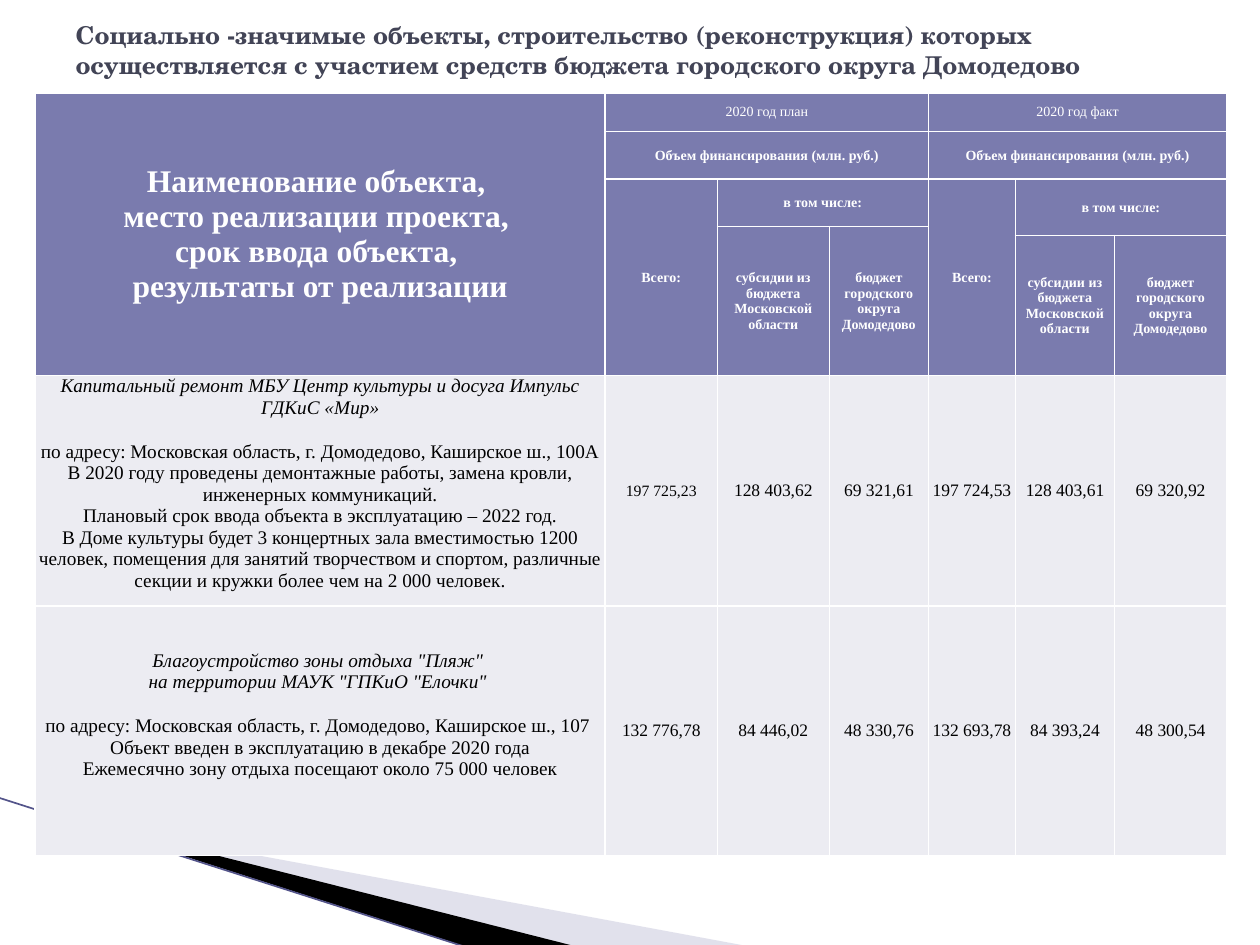
"""Build the slide on socially significant construction projects of the city district."""
from lxml import etree
from pptx import Presentation
from pptx import util as u
from pptx.dml import color
from pptx.enum import shapes, text
from pptx.oxml import ns

SERIF = "Times New Roman"
HEAD, BODY, WHITE, BLACK = "7A7BAE", "ECECF2", "FFFFFF", "000000"
COLS = [11.49, 2.26, 2.26, 2, 1.75, 2, 2.26]
ROWS = [0.78, 0.96, 0.96, 0.18, 2.82, 4.65, 5.03]
VOLUME = "Объем финансирования (млн. руб.)"
GRANT = "субсидии из бюджета Московской области"
LOCAL = "бюджет городского округа Домодедово"

# row, column, rows spanned, columns spanned, words, bold
HEADS = [
    (0, 1, 1, 3, "2020 год план", False),
    (0, 4, 1, 3, "2020 год факт", False),
    (1, 1, 1, 3, VOLUME, True),
    (1, 4, 1, 3, VOLUME, True),
    (2, 1, 3, 1, "Всего:", True),
    (2, 2, 1, 2, "в том числе:", True),
    (2, 4, 3, 1, "Всего:", True),
    (2, 5, 2, 2, "в том числе:", True),
    (3, 2, 2, 1, GRANT, True),
    (3, 3, 2, 1, LOCAL, True),
    (4, 5, 1, 1, GRANT, True),
    (4, 6, 1, 1, LOCAL, True),
]
NAME = ["Наименование объекта, ", "место реализации проекта, ",
        "срок ввода объекта, ", "результаты от реализации"]
# italic lines, plain lines, bottom margin, values
SITES = [
    (["Капитальный ремонт МБУ Центр культуры и досуга Импульс ГДКиС «Мир»"],
     ["по адресу: Московская область, г. Домодедово, Каширское ш., 100А",
      "В 2020 году проведены демонтажные работы, замена кровли, инженерных коммуникаций.",
      "Плановый срок ввода объекта в эксплуатацию – 2022 год.",
      "В Доме культуры будет 3 концертных зала вместимостью 1200 человек, помещения "
      "для занятий творчеством и спортом, различные секции и кружки более чем на "
      "2 000 человек."],
     0.3,
     ["197 725,23", "128 403,62", "69 321,61", "197 724,53", "128 403,61", "69 320,92"]),
    (['Благоустройство зоны отдыха "Пляж" ', 'на территории МАУК "ГПКиО "Елочки" '],
     ["по адресу: Московская область, г. Домодедово, Каширское ш., 107 ",
      "Объект введен в эксплуатацию в декабре 2020 года",
      "Ежемесячно зону отдыха посещают около 75 000 человек"],
     0.65,
     ["132 776,78", "84 446,02", "48 330,76", "132 693,78", "84 393,24", "48 300,54"]),
]


def rgb(code):
    """Turn a hex string into a colour."""
    return color.RGBColor.from_string(code)


class Page:
    """Hold the style and the current slide."""

    def __init__(self, deck):
        """Add a title-only slide."""
        self.slide = deck.slides.add_slide(deck.slide_layouts[5])
        self.items = self.slide.shapes

    def run(self, para, words, size, tint, bold=False, slant=False, font=SERIF):
        """Add one run of text."""
        run = para.add_run()
        run.text = words
        run.font.name, run.font.size = font, u.Pt(size)
        run.font.bold, run.font.italic = bold, slant
        run.font.color.rgb = rgb(tint)

    def title(self, words, box):
        """Place and fill the title."""
        head = self.items.title
        head.left, head.top, head.width, head.height = map(u.Cm, box)
        frame = head.text_frame
        frame.word_wrap, frame.auto_size = True, text.MSO_AUTO_SIZE.NONE
        frame.vertical_anchor = text.MSO_ANCHOR.MIDDLE
        para = frame.paragraphs[0]
        para.alignment = text.PP_ALIGN.LEFT
        self.run(para, words, 14, "424456", bold=True, font="TeX Gyre Schola")

    def wedge(self, points, tint, alpha=None):
        """Draw a filled outline."""
        dots = [(u.Cm(x), u.Cm(y)) for x, y in points]
        pen = self.items.build_freeform(*dots[0])
        pen.add_line_segments(dots[1:])
        form = pen.convert_to_shape()
        form.shadow.inherit = False
        form.fill.solid()
        form.fill.fore_color.rgb = rgb(tint)
        form.line.fill.background()
        if alpha:
            tone = form.fill._xPr.find(".//" + ns.qn("a:srgbClr"))
            etree.SubElement(tone, ns.qn("a:alpha"), val=str(alpha * 1000))

    def line(self, ends, tint, width):
        """Draw a straight line."""
        link = self.items.add_connector(shapes.MSO_CONNECTOR.STRAIGHT, *map(u.Cm, ends))
        link.line.color.rgb, link.line.width = rgb(tint), u.Pt(width)
        etree.SubElement(link._element.spPr, ns.qn("a:effectLst"))

    def table(self, left, top, cols, rows):
        """Add an empty table with white rules."""
        grid = self.items.add_table(len(rows), len(cols), u.Cm(left), u.Cm(top),
                                    u.Cm(sum(cols)), u.Cm(sum(rows))).table
        grid.first_row = grid.horz_banding = False
        for col, width in zip(grid.columns, cols):
            col.width = u.Cm(width)
        for row, height in zip(grid.rows, rows):
            row.height = u.Cm(height)
        for cell in grid.iter_cells():
            self.rule(cell)
        return grid

    def rule(self, cell):
        """Give a cell four white borders."""
        prop = cell._tc.get_or_add_tcPr()
        for side in ("lnL", "lnR", "lnT", "lnB"):
            edge = etree.SubElement(prop, ns.qn("a:" + side), w=str(u.Pt(1)))
            fill = etree.SubElement(edge, ns.qn("a:solidFill"))
            etree.SubElement(fill, ns.qn("a:srgbClr"), val=WHITE)

    def cell(self, cell, lines, fill, size, tint, bold=False, lead=(), foot=0):
        """Fill a cell with italic lead lines, then plain lines after a gap."""
        cell.fill.solid()
        cell.fill.fore_color.rgb = rgb(fill)
        cell.margin_left = cell.margin_right = cell.margin_top = 0
        cell.margin_bottom = u.Cm(foot)
        cell.vertical_anchor = text.MSO_ANCHOR.MIDDLE
        frame = cell.text_frame
        for i, words in enumerate([*lead, *lines]):
            para = frame.add_paragraph() if i else frame.paragraphs[0]
            para.alignment = text.PP_ALIGN.CENTER
            if lead and i == len(lead):
                para.space_before = u.Pt(13)
            self.run(para, words, size, tint, bold, i < len(lead))


def main():
    """Build and save the slide."""
    deck = Presentation()
    deck.slide_width, deck.slide_height = u.Cm(25.4), u.Cm(19.05)
    page = Page(deck)
    page.wedge([(1.4, 16.54), (15.11, 19.08), (11.58, 19.08), (1.4, 16.51)], "B6B6D1", 40)
    page.wedge([(1.35, 16.48), (11.61, 19.08), (9.45, 19.1), (1.37, 16.51)], BLACK)
    page.line((-0.03, 16.08, 9.42, 19.1), "53548A", 0.95)
    page.title("Cоциально -значимые объекты, строительство (реконструкция) которых "
               "осуществляется с участием средств бюджета городского округа Домодедово",
               (1.27, 0.13, 22.86, 1.75))

    grid = page.table(0.71, 1.87, COLS, ROWS)
    grid.cell(0, 0).merge(grid.cell(4, 0))
    page.cell(grid.cell(0, 0), NAME, HEAD, 18, WHITE, bold=True)
    for row, col, down, wide, words, bold in HEADS:
        cell = grid.cell(row, col)
        if down * wide > 1:
            cell.merge(grid.cell(row + down - 1, col + wide - 1))
        page.cell(cell, [words], HEAD, 8, WHITE, bold)
    for row, (lead, lines, foot, sums) in enumerate(SITES, 5):
        page.cell(grid.cell(row, 0), lines, BODY, 11, BLACK, lead=lead, foot=foot)
        for col, value in enumerate(sums, 1):
            size = 9 if (row, col) == (5, 1) else 10
            page.cell(grid.cell(row, col), [value], BODY, size, BLACK)
    deck.save("out.pptx")


if __name__ == "__main__":
    main()
